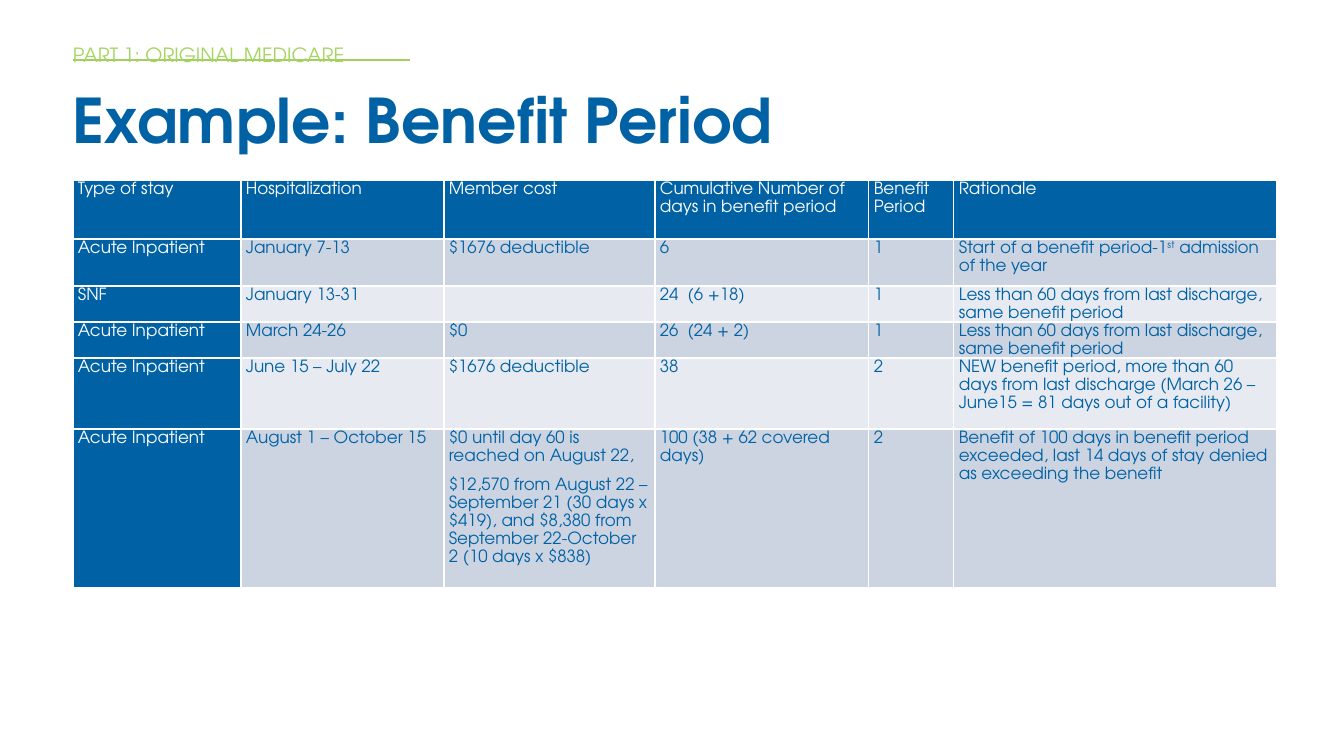
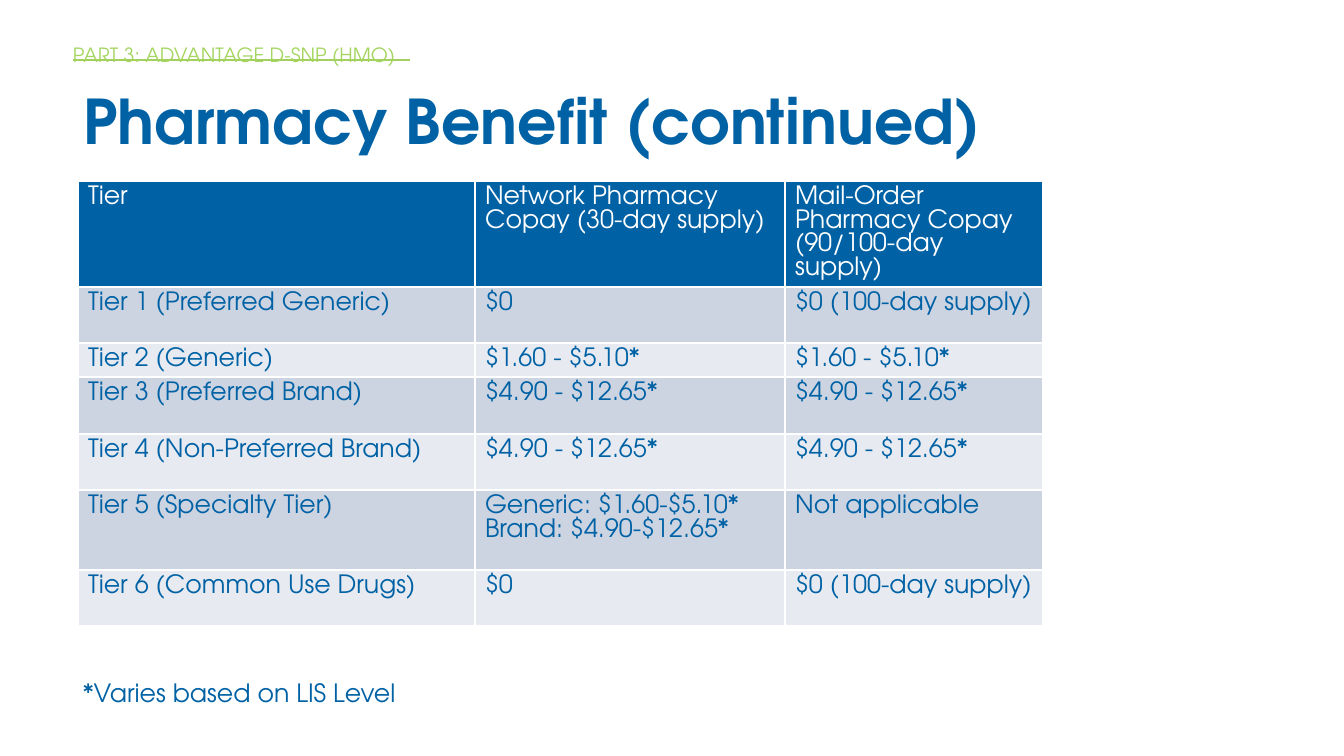
from lxml.etree import SubElement
from pptx import Presentation
from pptx.dml.color import RGBColor
from pptx.enum.shapes import MSO_CONNECTOR as Link
from pptx.enum.text import MSO_ANCHOR as Anchor, MSO_AUTO_SIZE as Auto, PP_ALIGN as Align
from pptx.oxml.ns import qn
from pptx.util import Pt

FONT = "TeX Gyre Adventor"
BLUE, WHITE, GREEN, RULE = "0062A5", "FFFFFF", "A3D55F", "A3CF5F"
BANDS = ["CCD3E1", "E7EAF0"]
EDGES = ["left", "top", "width", "height"]
HEAD = (73, 43, 338, 48)

STAYS = [
    ["Type of stay", "Hospitalization", "Member cost",
     "Cumulative Number of days in benefit period", "Benefit Period", "Rationale"],
    ["Acute Inpatient", "January 7-13", "$1676 deductible", "6", "1",
     "Start of a benefit period-1^st^ admission of the year"],
    ["SNF", "January 13-31", "", "24  (6 +18)", "1",
     "Less than 60 days from last discharge, same benefit period"],
    ["Acute Inpatient", "March 24-26", "$0", "26  (24 + 2)", "1",
     "Less than 60 days from last discharge, same benefit period"],
    ["Acute Inpatient", "June 15 – July 22", "$1676 deductible", "38", "2",
     "NEW benefit period, more than 60 days from last discharge "
     "(March 26 – June15 = 81 days out of a facility)"],
    ["Acute Inpatient", "August 1 – October 15",
     "$0 until day 60 is reached on August 22,\n"
     "$12,570 from August 22 – September 21 (30 days x $419), "
     "and $8,380 from September 22-October 2 (10 days x $838)",
     "100 (38 + 62 covered days)", "2",
     "Benefit of 100 days in benefit period exceeded, "
     "last 14 days of stay denied as exceeding the benefit"],
]
TIERS = [
    ["Tier", "Network Pharmacy Copay (30-day supply)",
     "Mail-Order Pharmacy Copay (90/100-day supply)"],
    ["Tier 1 (Preferred Generic)", "$0", "$0 (100-day supply)"],
    ["Tier 2 (Generic)", "$1.60 - $5.10*", "$1.60 - $5.10*"],
    ["Tier 3 (Preferred Brand)", "$4.90 - $12.65*", "$4.90 - $12.65*"],
    ["Tier 4 (Non-Preferred Brand)", "$4.90 - $12.65*", "$4.90 - $12.65*"],
    ["Tier 5 (Specialty Tier)", "Generic: $1.60-$5.10*\nBrand: $4.90-$12.65*",
     "Not applicable"],
    ["Tier 6 (Common Use Drugs)", "$0", "$0 (100-day supply)"],
]


def px(n):
    """Turn px into EMU."""
    return round(n * 914400 / 100.8)


def tint(hue):
    """Turn a hex string into a colour."""
    return RGBColor.from_string(hue)


def put(item, form):
    """Set each format value on an item."""
    for key, val in form.items():
        setattr(item, key, val)


def write(frame, text, size, hue, bold=False, **form):
    """Fill a frame, one paragraph a line, with ^ around superscripts."""
    for i, line in enumerate(text.split("\n")):
        para = frame.add_paragraph() if i else frame.paragraphs[0]
        put(para, form)
        for j, part in enumerate(line.split("^")):
            run = para.add_run()
            run.text = part
            put(run.font, {"name": FONT, "size": Pt(size), "bold": bold})
            run.font.color.rgb = tint(hue)
            if j % 2:
                run.font._element.set("baseline", "30000")


def place(shape, box):
    """Move a shape into a box."""
    put(shape, dict(zip(EDGES, map(px, box))))


def rule(slide, box):
    """Draw the header rule and hand it to the shared layout."""
    x, y, wide, _ = box
    line = slide.shapes.add_connector(
        Link.STRAIGHT, px(x), px(y + 17), px(x + wide - 1), px(y + 17))
    line.line.color.rgb = tint(RULE)
    line.line.width = Pt(1)
    SubElement(line.element.spPr, qn("a:effectLst"))
    slide.slide_layout.shapes.element.append(line.element)


def header(slide, text, box):
    """Write the part name in the body placeholder."""
    body = slide.placeholders[1]
    place(body, box)
    frame = body.text_frame
    put(frame, {"margin_left": 0, "margin_top": px(3), "margin_right": 0,
                "margin_bottom": 0, "word_wrap": True,
                "auto_size": Auto.NONE, "vertical_anchor": Anchor.TOP})
    write(frame, text, 14, GREEN, line_spacing=0.9, space_before=Pt(0))
    props = frame.paragraphs[0]._p.get_or_add_pPr()
    for key in ("marL", "indent"):
        props.set(key, "0")
    SubElement(props, qn("a:buNone"))


def title(slide, text, box):
    """Write the title in its placeholder."""
    shape = slide.shapes.title
    place(shape, box)
    put(shape.text_frame, {"word_wrap": True, "auto_size": Auto.NONE,
                           "vertical_anchor": Anchor.MIDDLE})
    write(shape.text_frame, text, 44, BLUE, True,
          line_spacing=0.9, alignment=Align.LEFT)


def grid(slide, at, data, cols, rows, size, side=False, pads=None, **form):
    """Build a banded table, with a dark first column if side is set."""
    frame = slide.shapes.add_table(
        len(rows), len(cols), *map(px, (*at, sum(cols), sum(rows))))
    table = frame.table
    table.first_col = side
    for col, wide in zip(table.columns, cols):
        col.width = px(wide)
    for row, tall in zip(table.rows, rows):
        row.height = px(tall)
    for r, line in enumerate(data):
        for c, text in enumerate(line):
            dark = r == 0 or (side and c == 0)
            cell = table.cell(r, c)
            put(cell, pads or {})
            cell.fill.solid()
            cell.fill.fore_color.rgb = tint(BLUE if dark else BANDS[(r - 1) % 2])
            write(cell.text_frame, text, size, WHITE if dark else BLUE, **form)


def note(slide, text, box):
    """Add a footnote."""
    frame = slide.shapes.add_textbox(*map(px, box)).text_frame
    frame.word_wrap = True
    write(frame, text, 18, BLUE)


def stays(slide):
    """Fill the benefit period slide."""
    header(slide, "PART 1: ORIGINAL MEDICARE", HEAD)
    title(slide, "Example: Benefit Period", (62, 79, 981, 90))
    pads = {"margin_left": px(5), "margin_right": px(5),
            "margin_top": 0, "margin_bottom": 0}
    grid(slide, (73, 180), STAYS, [168, 203, 211, 214, 85, 323],
         [59, 47, 36, 36, 71, 159], 12, True, pads,
         line_spacing=1.15, space_after=Pt(8))


def tiers(slide):
    """Fill the pharmacy slide."""
    header(slide, "PART 3: ADVANTAGE D-SNP (HMO)", HEAD)
    title(slide, "Pharmacy Benefit (continued)", (73, 67, 1135, 115))
    grid(slide, (78, 181), TIERS, [397, 310, 258],
         [106, 56, 34, 57, 56, 80, 56], 18)
    note(slide, "*Varies based on LIS Level", (73, 672, 487, 40))


def main():
    """Build and save the deck."""
    deck = Presentation()
    put(deck, {"slide_width": px(1344), "slide_height": px(756)})
    plan = deck.slide_layouts[1]
    first, second = [deck.slides.add_slide(plan) for _ in range(2)]
    rule(first, HEAD)
    stays(first)
    tiers(second)
    deck.save("out.pptx")


if __name__ == "__main__":
    main()
